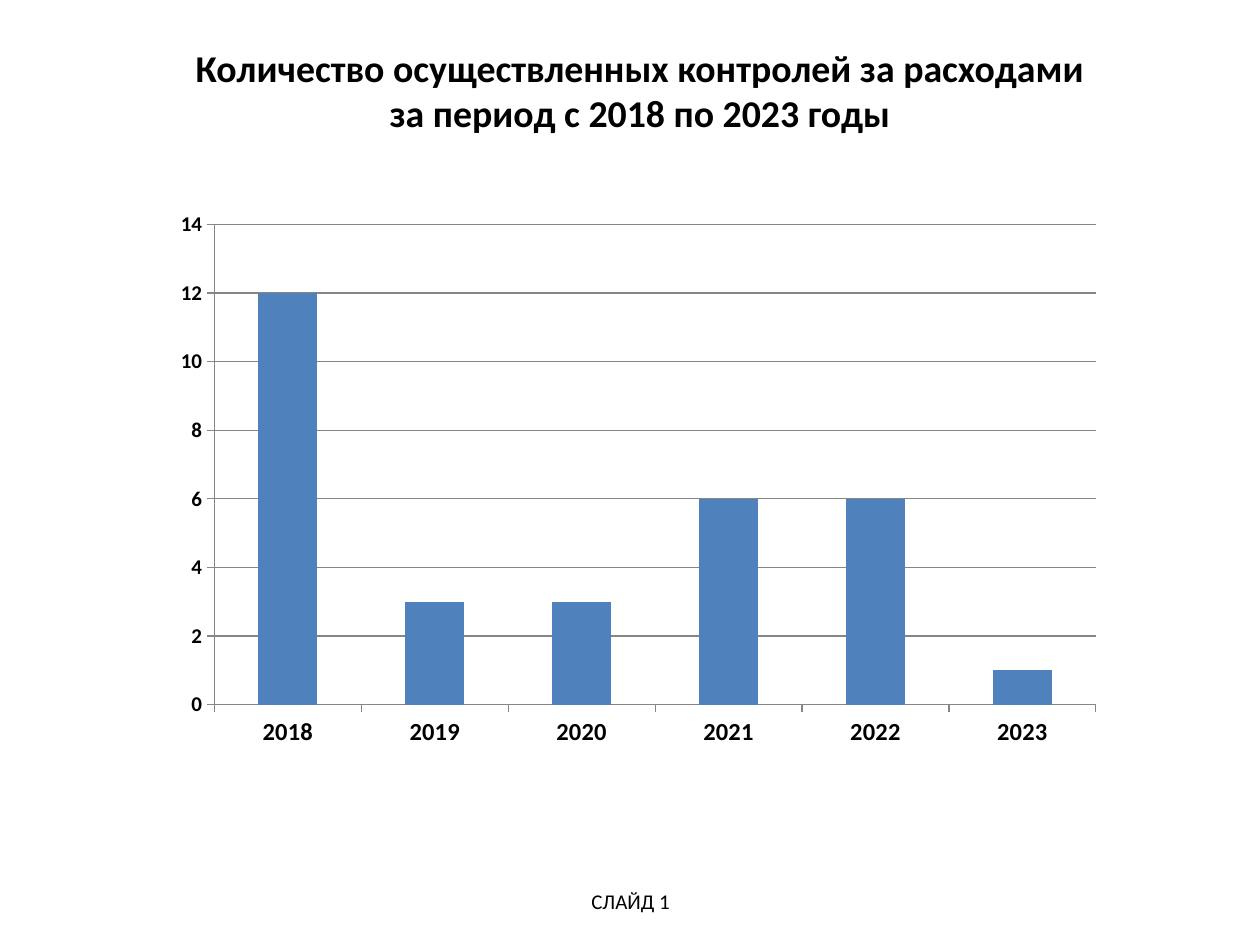
from lxml import etree
from pptx import Presentation
from pptx.chart.data import CategoryChartData
from pptx.dml.color import RGBColor
from pptx.enum.chart import XL_CHART_TYPE as ChartType, XL_TICK_MARK as TickMark
from pptx.enum.text import MSO_ANCHOR as Anchor, PP_ALIGN as Align
from pptx.oxml import parse_xml
from pptx.oxml.ns import nsdecls
from pptx.util import Inches, Pt

BLACK = RGBColor(0x00, 0x00, 0x00)
BLUE = RGBColor(0x4F, 0x81, 0xBD)
GRAY = RGBColor(0x86, 0x86, 0x86)
FONT = "Calibri"

prs = Presentation()
prs.slide_width = Inches(10)
prs.slide_height = Inches(7.5)
slide = prs.slides.add_slide(prs.slide_layouts[6])


def add_text(text, left, top, width, height, size, bold=False):
    frame = slide.shapes.add_textbox(
        Inches(left), Inches(top), Inches(width), Inches(height)
    ).text_frame
    frame.word_wrap = True
    frame.vertical_anchor = Anchor.MIDDLE
    frame.text = text
    paragraph = frame.paragraphs[0]
    paragraph.alignment = Align.CENTER
    for run in paragraph.runs:
        run.font.name = FONT
        run.font.size = Pt(size)
        run.font.bold = bold
        run.font.color.rgb = BLACK


add_text(
    "Количество осуществленных контролей за расходами\vза период с 2018 по 2023 годы",
    left=0.83, top=0.36, width=8.5, height=0.71, size=21.6, bold=True,
)

controls = CategoryChartData(number_format="General")
controls.categories = [str(year) for year in range(2018, 2024)]
controls.add_series("Series 1", (12, 3, 3, 6, 6, 1))
chart = slide.shapes.add_chart(
    ChartType.COLUMN_CLUSTERED,
    Inches(0.83), Inches(1.39), Inches(8.9), Inches(5.43), controls,
).chart
chart.has_title = False
chart.has_legend = False
chart.font.name = FONT
chart.font.size = Pt(10)
chart.font.color.rgb = BLACK

columns = chart.plots[0]
columns.gap_width = 150
columns.vary_by_categories = False
columns.series[0].format.fill.solid()
columns.series[0].format.fill.fore_color.rgb = BLUE

years, counts = chart.category_axis, chart.value_axis
for axis, size in ((years, 14), (counts, 12)):
    axis.major_tick_mark = TickMark.OUTSIDE
    axis.minor_tick_mark = TickMark.NONE
    axis.format.line.color.rgb = GRAY
    axis.format.line.width = Pt(0.75)
    labels = axis.tick_labels.font
    labels.name = FONT
    labels.size = Pt(size)
    labels.bold = True
    labels.color.rgb = BLACK
counts.minimum_scale = 0
counts.maximum_scale = 14
counts.major_unit = 2
counts.has_major_gridlines = True
counts.major_gridlines.format.line.color.rgb = GRAY
counts.major_gridlines.format.line.width = Pt(0.75)

plot_area = chart.plots[0]._element.getparent()
for old_layout in plot_area.findall("{*}layout"):
    plot_area.remove(old_layout)
layout = parse_xml(f"<c:layout {nsdecls('c')}><c:manualLayout/></c:layout>")
for tag, value in (
    ("layoutTarget", "inner"), ("xMode", "edge"), ("yMode", "edge"),
    ("x", "0.098"), ("y", "0.072"), ("w", "0.786"), ("h", "0.702"),
):
    chart_namespace = etree.QName(layout).namespace
    etree.SubElement(layout[0], f"{{{chart_namespace}}}{tag}").set("val", value)
plot_area.insert(0, layout)

add_text("СЛАЙД 1", left=3.42, top=6.95, width=3.17, height=0.4, size=12)

prs.save("out.pptx")
